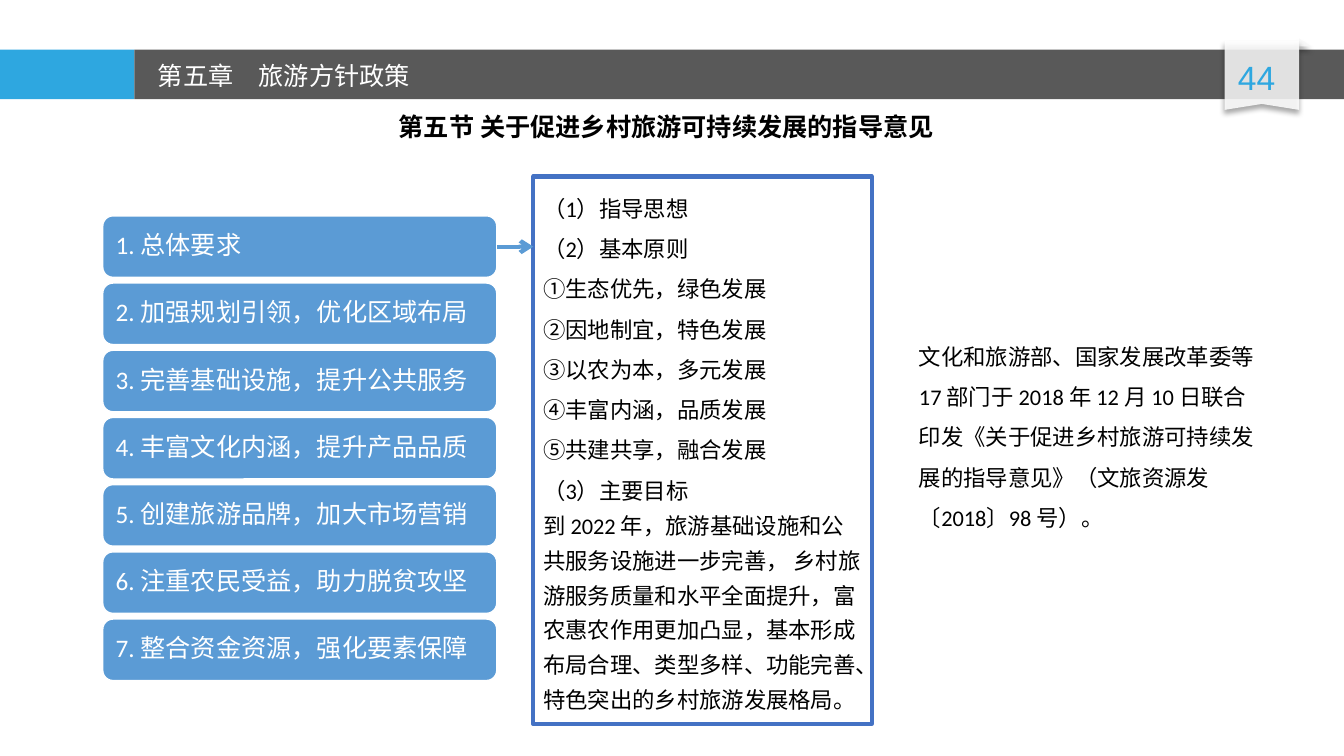
from lxml import etree
from pptx import Presentation
from pptx.dml.color import RGBColor
from pptx.enum.shapes import MSO_CONNECTOR, MSO_SHAPE
from pptx.enum.text import MSO_ANCHOR, MSO_AUTO_SIZE, PP_ALIGN
from pptx.oxml import parse_xml
from pptx.oxml.ns import nsdecls, qn
from pptx.util import Cm, Pt

RECTANGLE, ROUNDED = MSO_SHAPE.RECTANGLE, MSO_SHAPE.ROUNDED_RECTANGLE
TRIANGLE, STRAIGHT = MSO_SHAPE.RIGHT_TRIANGLE, MSO_CONNECTOR.STRAIGHT
LEFT, CENTER = PP_ALIGN.LEFT, PP_ALIGN.CENTER
TOP, MIDDLE = MSO_ANCHOR.TOP, MSO_ANCHOR.MIDDLE
NO_AUTO_SIZE = MSO_AUTO_SIZE.NONE

CHINESE_FONT = "Noto Sans CJK SC"
BODY_FONT = "Calibri"
ACCENT, WHITE, BLACK, STEP_BLUE = "2EA7E0", "FFFFFF", "000000", "5B9BD5"

STEPS = [
    "1. 总体要求",
    "2. 加强规划引领，优化区域布局",
    "3. 完善基础设施，提升公共服务",
    "4. 丰富文化内涵，提升产品品质",
    "5. 创建旅游品牌，加大市场营销",
    "6. 注重农民受益，助力脱贫攻坚",
    "7. 整合资金资源，强化要素保障",
]
OUTLINE = [
    "（1）指导思想",
    "（2）基本原则",
    "①生态优先，绿色发展",
    "②因地制宜，特色发展",
    "③以农为本，多元发展",
    "④丰富内涵，品质发展",
    "⑤共建共享，融合发展",
    "（3）主要目标",
]
GOAL = ("到 2022 年，旅游基础设施和公共服务设施进一步完善， 乡村旅游服务质量和水平全面提升，"
        "富农惠农作用更加凸显，基本形成布局合理、类型多样、功能完善、特色突出的乡村旅游发展格局。")
SOURCE_NOTE = ("文化和旅游部、国家发展改革委等 17 部门于 2018 年 12 月 10 日联合 "
               "印发《关于促进乡村旅游可持续发展的指导意见》（文旅资源发〔2018〕98 号）。")


def color(value):
    return RGBColor.from_string(value)


def style_shape(shape, fill, line=None, line_width=1):
    shape.shadow.inherit = False
    shape.fill.solid()
    shape.fill.fore_color.rgb = color(fill)
    if line:
        shape.line.color.rgb = color(line)
        shape.line.width = Pt(line_width)
    else:
        shape.line.fill.background()


def add_box(page, kind, box, fill, line=None, line_width=1):
    shape = page.shapes.add_shape(kind, *map(Cm, box))
    style_shape(shape, fill, line, line_width)
    return shape


def write(shape, lines, size, ink, font=BODY_FONT, align=LEFT, anchor=TOP, bold=False):
    """Fill a shape with (text, line spacing) paragraphs."""
    frame = shape.text_frame
    frame.word_wrap = True
    frame.auto_size = NO_AUTO_SIZE
    frame.vertical_anchor = anchor
    for index, (text, spacing) in enumerate(lines):
        para = frame.paragraphs[0] if index == 0 else frame.add_paragraph()
        para.alignment = align
        para.line_spacing = spacing
        span = para.add_run()
        span.text = text
        span.font.name = font
        span.font.size = Pt(size)
        span.font.bold = bold
        span.font.color.rgb = color(ink)
        east_asian = etree.SubElement(span.font._element, qn("a:ea"))
        east_asian.set("typeface", CHINESE_FONT)


def add_text(page, box, lines, size, ink, **options):
    write(page.shapes.add_textbox(*map(Cm, box)), lines, size, ink, **options)


def make_paper(shape, fill):
    """Give a shape a translucent fill and a soft shadow below it."""
    style_shape(shape, fill)
    properties = shape._element.spPr
    tint = properties.find(qn("a:solidFill"))[0]
    etree.SubElement(tint, qn("a:alpha")).set("val", "85000")
    properties.find(qn("a:effectLst")).append(parse_xml(
        f'<a:outerShdw {nsdecls("a")} blurRad="{Pt(4)}" dist="{Pt(3)}" dir="5400000">'
        '<a:srgbClr val="000000"><a:alpha val="40000"/></a:srgbClr></a:outerShdw>'))


def add_page_ribbon(page, box, number):
    left, top, width, height = box
    right, bottom = left + width, top + height
    # Folded corner behind the ribbon
    make_paper(page.shapes.add_shape(TRIANGLE, Cm(right), Cm(top - 0.05), Cm(0.3), Cm(0.2)),
               "F8F8F8")
    # Ribbon with a notched lower edge
    outline = page.shapes.build_freeform(Cm(left), Cm(top))
    corners = [(right, top), (right, bottom), (left + width / 2, bottom - 0.15), (left, bottom)]
    outline.add_line_segments([(Cm(x), Cm(y)) for x, y in corners], close=True)
    make_paper(outline.convert_to_shape(), WHITE)
    add_text(page, (left - 0.49, top + 0.28, 2.6, 1.27), [(number, 1.0)], 24, ACCENT,
             font="Arial", align=CENTER)


def add_header(page, box, chapter, number):
    left, top, width, height = box
    tab = 3.39
    add_box(page, RECTANGLE, (left, top, tab, height), ACCENT)
    add_box(page, RECTANGLE, (left + tab, top, width - tab, height), "595959")
    add_page_ribbon(page, (left + 30.86, top - 0.23, 1.88, 1.75), number)
    add_text(page, (left + tab + 0.34, top + 0.15, 12.8, 1.02), [(chapter, 1.0)], 18, WHITE,
             font=CHINESE_FONT)


def add_steps(page, box):
    """Stack the steps evenly and return the first one."""
    left, top, width, height = box
    step_height = 1.55
    pitch = (height - step_height) / (len(STEPS) - 1)
    shapes = []
    for index, text in enumerate(STEPS):
        step = add_box(page, ROUNDED, (left, top + index * pitch, width, step_height),
                       STEP_BLUE, WHITE)
        step.text_frame.margin_left = step.text_frame.margin_right = Cm(0.25)
        write(step, [(text, 0.9)], 18, WHITE, anchor=MIDDLE)
        shapes.append(step)
    return shapes[0]


def add_detail_panel(page, box):
    panel = add_box(page, RECTANGLE, box, WHITE, "4472C4", 3)
    write(panel, [(text, 1.5) for text in OUTLINE] + [(GOAL, 1.3)], 16, BLACK)
    return panel


def add_arrow(page, step, panel):
    middle = step.top + step.height // 2
    arrow = page.shapes.add_connector(STRAIGHT, step.left + step.width, middle,
                                      panel.left, middle)
    arrow.begin_connect(step, 3)
    arrow.line.color.rgb = color(STEP_BLUE)
    arrow.line.width = Pt(3)
    etree.SubElement(arrow.line._get_or_add_ln(), qn("a:tailEnd")).set("type", "arrow")
    etree.SubElement(arrow._element.spPr, qn("a:effectLst"))


def main():
    deck = Presentation()
    deck.slide_width, deck.slide_height = Cm(33.87), Cm(19.05)
    page = deck.slides.add_slide(deck.slide_layouts[6])

    # Header band and section title
    add_header(page, (0, 1.25, 33.87, 1.25), "第五章　旅游方针政策", "44")
    add_text(page, (7.39, 2.69, 18.8, 1.02), [("第五节 关于促进乡村旅游可持续发展的指导意见", 1.0)],
             18, BLACK, align=CENTER, bold=True)

    # Steps, details of the first step, and the source note
    first_step = add_steps(page, (2.59, 5.44, 9.93, 11.71))
    panel = add_detail_panel(page, (13.44, 4.45, 8.53, 13.79))
    add_arrow(page, first_step, panel)
    add_text(page, (22.91, 8.18, 9.4, 5.28), [(SOURCE_NOTE, 1.5)], 16, BLACK)

    deck.save("out.pptx")


if __name__ == "__main__":
    main()
